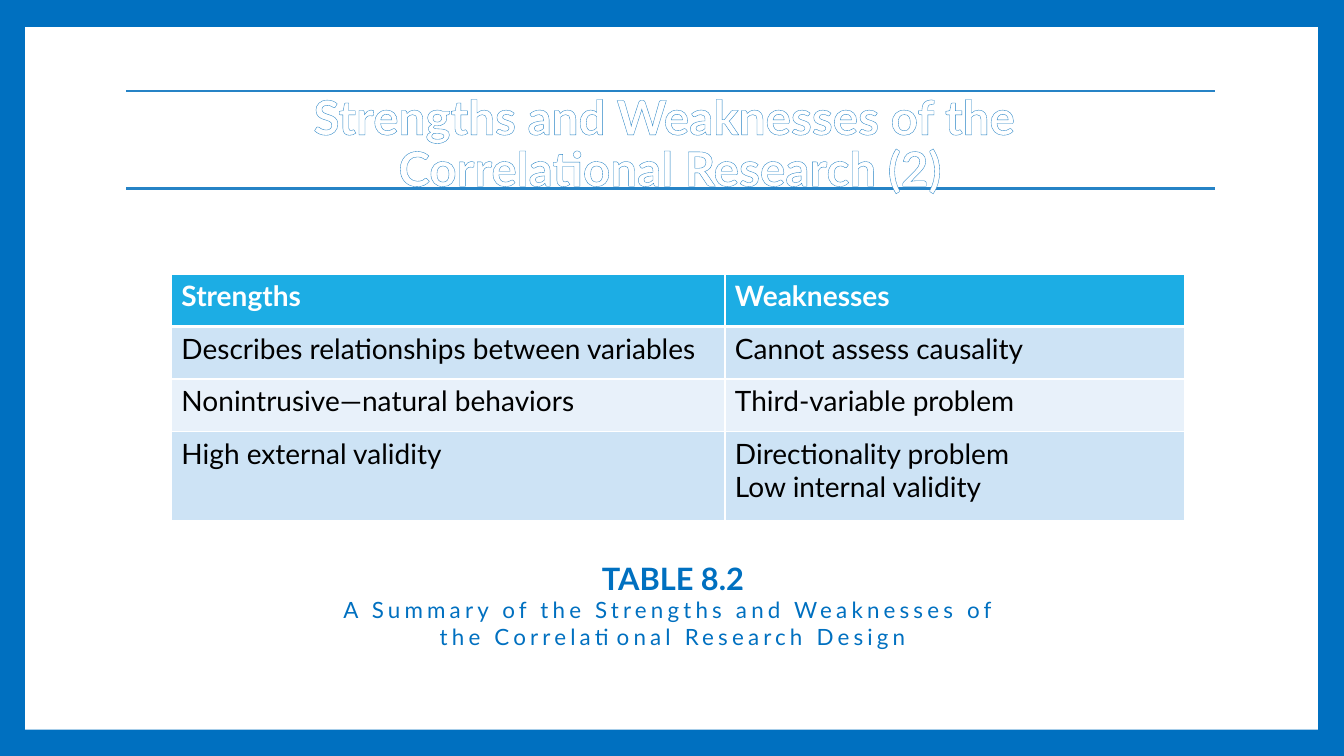
"""Build the slide on strengths and weaknesses of correlational research."""
from lxml import etree
from pptx import Presentation
from pptx.dml.color import RGBColor
from pptx.enum.shapes import MSO_CONNECTOR, MSO_SHAPE
from pptx.enum.text import MSO_ANCHOR, PP_ALIGN
from pptx.oxml import parse_xml
from pptx.oxml.ns import nsdecls, qn
from pptx.util import Pt

PX = 9144
BLUE, RULE, WHITE = "0070C0", "2683C6", "FFFFFF"


def rgb(color):
    return RGBColor.from_string(color)


def line_xml(tag, color, width):
    return parse_xml(
        f'<a:{tag} {nsdecls("a")} w="{int(Pt(width))}"><a:solidFill>'
        f'<a:srgbClr val="{color}"/></a:solidFill></a:{tag}>')


prs = Presentation()
prs.slide_width, prs.slide_height = 1333 * PX, 750 * PX
s = prs.slides.add_slide(prs.slide_layouts[6])
s.background.fill.solid()
s.background.fill.fore_color.rgb = rgb(BLUE)

panel = s.shapes.add_shape(MSO_SHAPE.RECTANGLE, 25 * PX, 27 * PX, 1282 * PX, 697 * PX)
panel.shadow.inherit = False
panel.fill.solid()
panel.fill.fore_color.rgb = rgb(WHITE)
panel.line.fill.background()

for y in (187, 90):
    rule = s.shapes.add_connector(MSO_CONNECTOR.STRAIGHT, 125 * PX, y * PX, 1205 * PX, y * PX)
    rule.line.color.rgb = rgb(RULE)
    rule.line.width = Pt(1.5)
    etree.SubElement(rule._element.spPr, qn("a:effectLst"))

title = s.shapes.add_textbox(154 * PX, 70 * PX, 1021 * PX, 148 * PX)
tf = title.text_frame
tf.word_wrap = True
tf.vertical_anchor = MSO_ANCHOR.MIDDLE
tf.text = "Strengths and Weaknesses of the \nCorrelational Research (2)"
for p in tf.paragraphs:
    p.alignment = PP_ALIGN.CENTER
    p.line_spacing = 0.9
    r = p.runs[0]
    r.font.name, r.font.size, r.font.bold = "Lato", Pt(34), True
    r.font.color.rgb = rgb(WHITE)
    r.font._element.insert(0, line_xml("ln", RULE, 0.52))

caption = s.shapes.add_textbox(270 * PX, 550 * PX, 790 * PX, 101 * PX)
tf = caption.text_frame
tf.word_wrap = True
p = tf.paragraphs[0]
r = p.add_run()
r.text = "TABLE 8.2"
r.font.size, r.font.bold = Pt(22), True
p.add_line_break()
summary = [p.add_run(), tf.add_paragraph().add_run()]
summary[0].text = "A Summary of the Strengths and Weaknesses of "
summary[1].text = "the Correlational Research Design"
for r in summary:
    r.font.size = Pt(16)
    r.font._element.set("spc", "300")
for p in tf.paragraphs:
    p.alignment = PP_ALIGN.CENTER
    p._p.get_or_add_pPr().set("marL", str(5 * PX))
    for r in p.runs:
        r.font.name = "Lato"
        r.font.color.rgb = rgb(BLUE)

rows = [
    ("Strengths", "Weaknesses"),
    ("Describes relationships between variables", "Cannot assess causality"),
    ("Nonintrusive—natural behaviors", "Third-variable problem"),
    ("High external validity", "Directionality problem\nLow internal validity"),
]
row_fills = ["1CADE4", "CDE3F5", "E8F1FA", "CDE3F5"]
row_heights = [52, 52, 52, 89]
table = s.shapes.add_table(4, 2, 170 * PX, 272 * PX, 1005 * PX, 245 * PX).table
for column, width in zip(table.columns, (549, 456)):
    column.width = width * PX
for i, texts in enumerate(rows):
    table.rows[i].height = row_heights[i] * PX
    header = i == 0
    for j, text in enumerate(texts):
        cell = table.cell(i, j)
        cell.text = text
        cell.fill.solid()
        cell.fill.fore_color.rgb = rgb(row_fills[i])
        for p in cell.text_frame.paragraphs:
            p.font.name, p.font.size, p.font.bold = "Lato", Pt(20), header
            p.font.color.rgb = rgb(WHITE if header else "000000")
        widths = {"lnL": 1, "lnR": 1, "lnT": 3 if i == 1 else 1, "lnB": 3 if header else 1}
        for k, (side, width) in enumerate(widths.items()):
            cell._tc.get_or_add_tcPr().insert(k, line_xml(side, WHITE, width))

prs.save("out.pptx")
